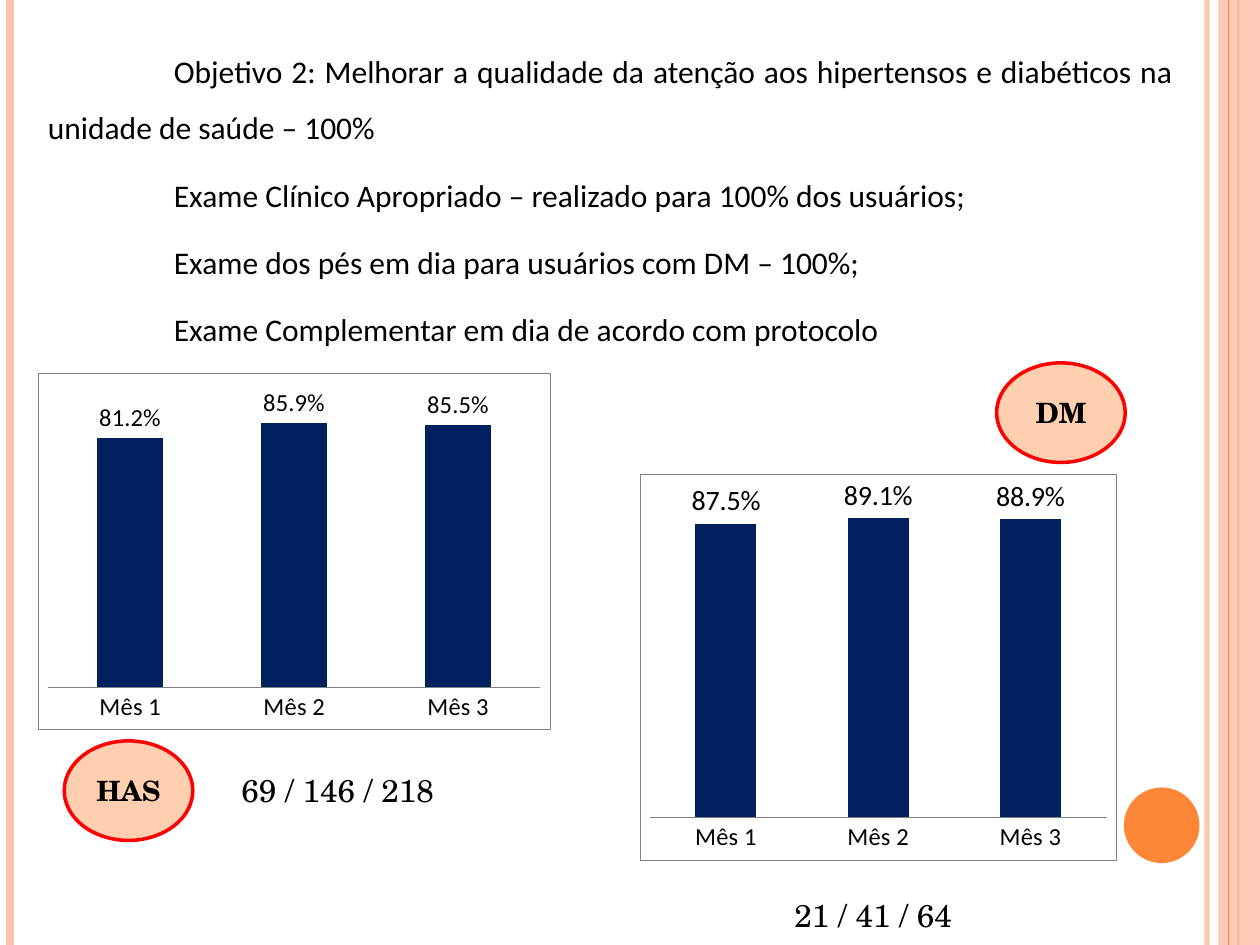
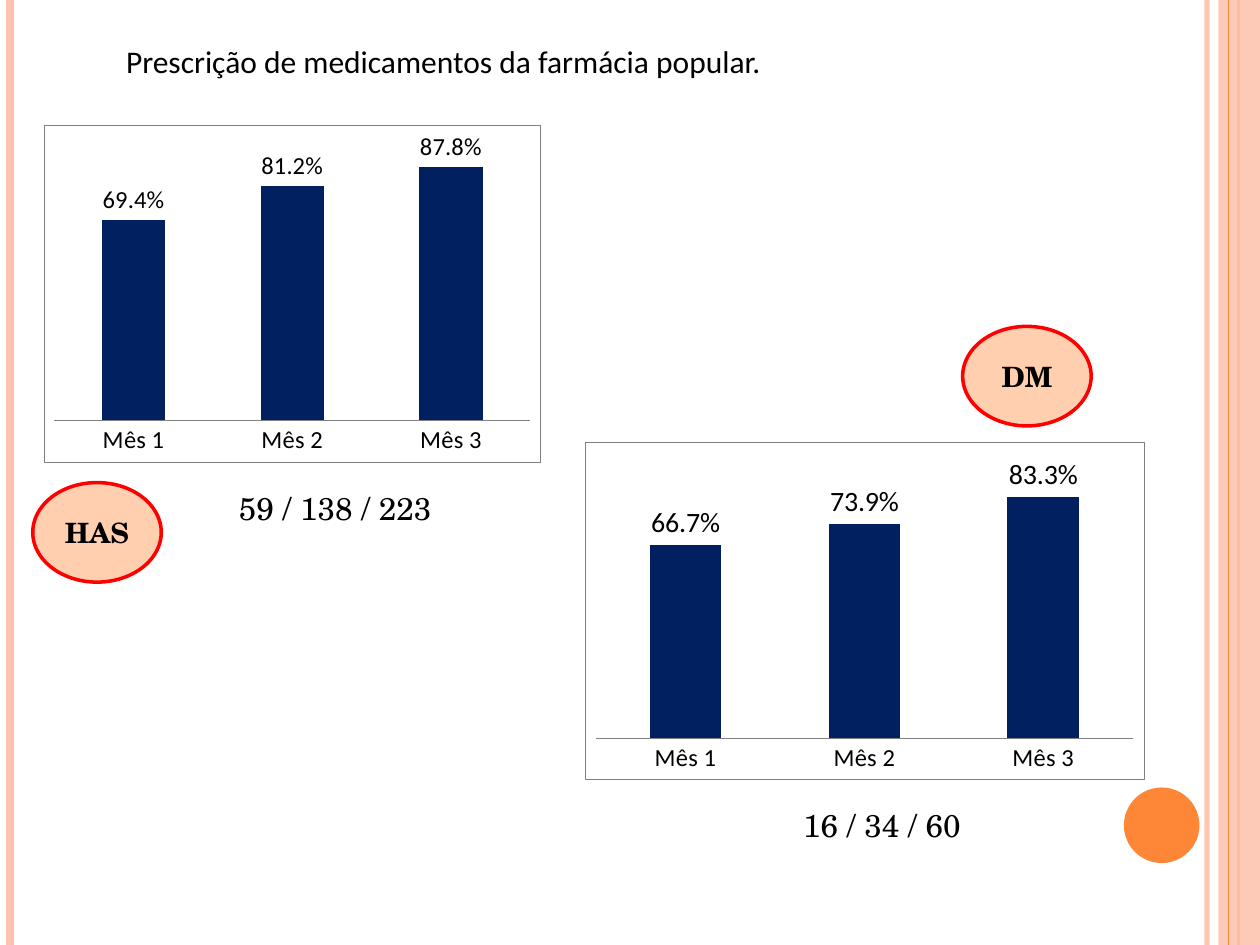
"""Build two slides comparing monthly HAS and DM indicators in column charts."""
import dataclasses

import lxml.etree
import pptx
import pptx.chart.data
import pptx.dml.color
import pptx.enum.chart
import pptx.enum.shapes
import pptx.enum.text
import pptx.oxml
import pptx.oxml.ns
import pptx.util

Inches = pptx.util.Inches
Pt = pptx.util.Pt
qn = pptx.oxml.ns.qn
OVAL = pptx.enum.shapes.MSO_SHAPE.OVAL


@dataclasses.dataclass(frozen=True)
class Theme:
    peach: str = "FEC3AE"
    orange: str = "FE8637"
    badge: str = "FFCFAF"
    red: str = "FF0000"
    navy: str = "002060"
    gray: str = "808080"
    white: str = "FFFFFF"
    black: str = "000000"
    sans: str = "Calibri"
    serif: str = "TeX Gyre Schola"
    text_size: int = 18
    badge_size: int = 16
    axis_size: int = 14
    chart_size: int = 10


theme = Theme()


def style_font(font, size, name, bold=False):
    font.size = Pt(size)
    font.name = name
    font.bold = bold
    font.color.rgb = pptx.dml.color.RGBColor.from_string(theme.black)


def paint(shape, fill, line=None, width=0):
    shape.shadow.inherit = False
    shape.fill.solid()
    shape.fill.fore_color.rgb = pptx.dml.color.RGBColor.from_string(fill)
    if line:
        shape.line.color.rgb = pptx.dml.color.RGBColor.from_string(line)
        shape.line.width = Pt(width)
    else:
        shape.line.fill.background()


pages = [
    {
        "body": (0.28, 0.21, 9.13, 6.87),
        "level": 0, "margin": 0, "indent": 1, "before": 6,
        "lines": [
            "Objetivo 2: Melhorar a qualidade da atenção aos hipertensos e diabéticos na unidade de saúde – 100%",
            "Exame Clínico Apropriado – realizado para 100% dos usuários;",
            "Exame dos pés em dia para usuários com DM – 100%;",
            "Exame Complementar em dia de acordo com protocolo",
        ],
        "groups": [
            ("HAS", (0.3, 2.96, 4.07, 2.83), (0.812, 0.859, 0.855), 14,
             (0.51, 5.88), "69 / 146 / 218", (1.54, 6.07)),
            ("DM", (5.08, 3.76, 3.78, 3.07), (0.875, 0.891, 0.889), 16,
             (7.91, 2.88), "21 / 41 / 64", (5.79, 7.06)),
        ],
    },
    {
        "body": (0.5, 0.13, 8.17, 6.95),
        "level": 1, "margin": 0.4, "indent": 0, "before": 3.6,
        "lines": ["Prescrição de medicamentos da farmácia popular."],
        "groups": [
            ("HAS", (0.35, 0.99, 3.94, 2.68), (0.694, 0.812, 0.878), 14,
             (0.26, 3.83), "59 / 138 / 223", (1.52, 3.83)),
            ("DM", (4.64, 3.51, 4.44, 2.68), (0.667, 0.739, 0.833), 16,
             (7.64, 2.59), "16 / 34 / 60", (5.86, 6.35)),
        ],
    },
]

deck = pptx.Presentation()
deck.slide_width = Inches(10)
deck.slide_height = Inches(7.5)
layout = deck.slide_layouts[1]
slides = [deck.slides.add_slide(layout) for content in pages]

shapes = slides[0].shapes
stripes = []
for x, color, width in [(9.58, theme.peach, 3), (0.08, theme.peach, 4.5),
                        (9.83, theme.orange, 1.5), (9.75, theme.orange, 0.75)]:
    stripe = shapes.add_connector(pptx.enum.shapes.MSO_CONNECTOR.STRAIGHT,
                                  Inches(x), 0, Inches(x), deck.slide_height)
    stripe.line.color.rgb = pptx.dml.color.RGBColor.from_string(color)
    stripe.line.width = Pt(width)
    lxml.etree.SubElement(stripe.element.spPr, qn("a:effectLst"))
    stripes.append(stripe)
band = shapes.add_shape(pptx.enum.shapes.MSO_SHAPE.RECTANGLE,
                        Inches(9.67), 0, Inches(0.33), deck.slide_height)
paint(band, theme.peach)
disc = shapes.add_shape(OVAL, Inches(8.92), Inches(6.25), Inches(0.6), Inches(0.6))
paint(disc, theme.orange)
for part, opacity in [(stripes[0], 93), (band, 87)]:
    color = next(part.element.spPr.iter(qn("a:srgbClr")))
    lxml.etree.SubElement(color, qn("a:alpha"), val=str(opacity * 1000))
for part in [*stripes[:3], band, stripes[3], disc]:
    layout.shapes.element.append(part.element)

for page, content in zip(slides, pages):
    title = page.shapes.title.element
    title.getparent().remove(title)
    body = page.placeholders[1]
    body.left, body.top, body.width, body.height = map(Inches, content["body"])
    frame = body.text_frame
    frame.auto_size = pptx.enum.text.MSO_AUTO_SIZE.NONE
    frame.vertical_anchor = pptx.enum.text.MSO_ANCHOR.TOP
    for index, line in enumerate(content["lines"]):
        para = frame.add_paragraph() if index else frame.paragraphs[0]
        para.level = content["level"]
        para.alignment = pptx.enum.text.PP_ALIGN.JUSTIFY
        para.line_spacing = 1.5
        para.space_before = Pt(content["before"])
        properties = para._p.get_or_add_pPr()
        properties.set("marL", str(Inches(content["margin"])))
        properties.set("indent", str(Inches(content["indent"])))
        lxml.etree.SubElement(properties, qn("a:buNone"))
        span = para.add_run()
        span.text = line
        style_font(span.font, theme.text_size, theme.sans)

    for group, place, values, label_size, badge_at, counts, counts_at in content["groups"]:
        data = pptx.chart.data.CategoryChartData(number_format="0.0%")
        data.categories = ["Mês 1", "Mês 2", "Mês 3"]
        data.add_series("Series 1", values)
        chart = page.shapes.add_chart(pptx.enum.chart.XL_CHART_TYPE.COLUMN_CLUSTERED,
                                      *map(Inches, place), data).chart
        chart.has_legend = False
        chart.has_title = False
        style_font(chart.font, theme.chart_size, theme.sans)

        value_axis = chart.value_axis
        value_axis.minimum_scale = 0
        value_axis.maximum_scale = 1
        value_axis.major_unit = 0.1
        value_axis.has_major_gridlines = False
        value_axis.visible = False
        category_axis = chart.category_axis
        category_axis.major_tick_mark = pptx.enum.chart.XL_TICK_MARK.NONE
        category_axis.format.line.color.rgb = pptx.dml.color.RGBColor.from_string(theme.gray)
        category_axis.format.line.width = Pt(0.25)
        style_font(category_axis.tick_labels.font, theme.axis_size, theme.sans)

        plot = chart.plots[0]
        plot.gap_width = 150
        plot.overlap = -25
        plot.vary_by_categories = False
        bars = plot.series[0].format.fill
        bars.solid()
        bars.fore_color.rgb = pptx.dml.color.RGBColor.from_string(theme.navy)
        plot.has_data_labels = True
        labels = plot.data_labels
        labels.show_value = True
        labels.number_format = "0.0%"
        labels.number_format_is_linked = False
        labels.position = pptx.enum.chart.XL_LABEL_POSITION.OUTSIDE_END
        style_font(labels.font, label_size, theme.sans)

        chart_node = chart.element.find(qn("c:chart"))
        plot_area = chart_node.find(qn("c:plotArea"))
        border = f'<a:solidFill><a:srgbClr val="{theme.gray}"/></a:solidFill>'
        for previous, outline in [(chart_node, border), (plot_area[-1], "<a:noFill/>")]:
            previous.addnext(pptx.oxml.parse_xml(
                f'<c:spPr {pptx.oxml.ns.nsdecls("c", "a")}><a:solidFill>'
                f'<a:srgbClr val="{theme.white}"/></a:solidFill>'
                f'<a:ln w="{Pt(0.25)}">{outline}</a:ln></c:spPr>'))

        badge = page.shapes.add_shape(OVAL, *map(Inches, badge_at), Inches(1.02), Inches(0.79))
        paint(badge, theme.badge, theme.red, 2)
        badge.text_frame.vertical_anchor = pptx.enum.text.MSO_ANCHOR.MIDDLE
        box = page.shapes.add_textbox(*map(Inches, counts_at), Inches(2.28), Inches(0.4))
        box.text_frame.word_wrap = True
        box.text_frame.auto_size = pptx.enum.text.MSO_AUTO_SIZE.SHAPE_TO_FIT_TEXT
        for holder, text, size, bold in [(badge, group, theme.badge_size, True),
                                         (box, counts, theme.text_size, False)]:
            para = holder.text_frame.paragraphs[0]
            para.alignment = pptx.enum.text.PP_ALIGN.CENTER
            span = para.add_run()
            span.text = text
            style_font(span.font, size, theme.serif, bold)

deck.save("out.pptx")
